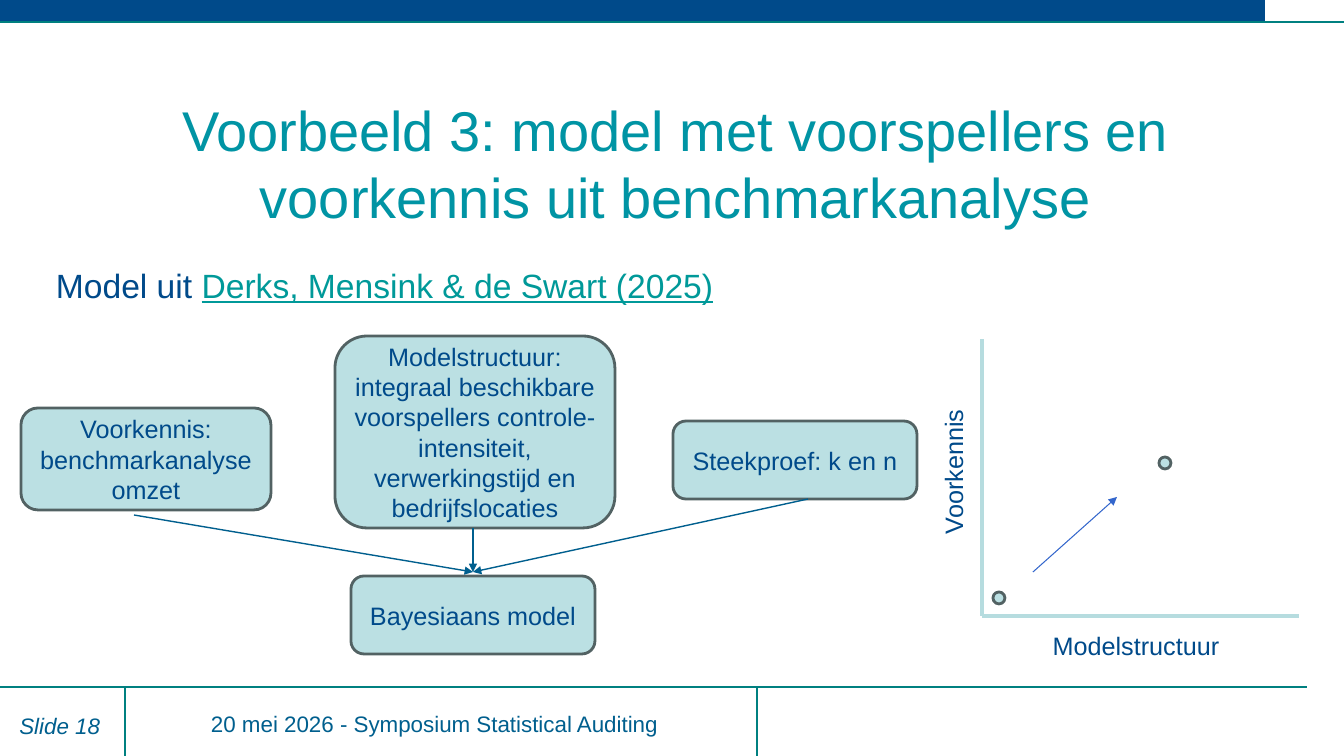
import pptx
import pptx.util
import pptx.dml.color
import pptx.enum.shapes
import pptx.enum.text
import pptx.oxml.ns
from lxml import etree

RGB = pptx.dml.color.RGBColor
SHAPE = pptx.enum.shapes.MSO_SHAPE
ALIGN = pptx.enum.text.PP_ALIGN
ANCHOR = pptx.enum.text.MSO_ANCHOR

NAVY = RGB(0x00, 0x4A, 0x8A)
TITLE_TEAL = RGB(0x00, 0x94, 0xA4)
RULE_TEAL = RGB(0x00, 0x80, 0x80)
LINK_TEAL = RGB(0x00, 0x99, 0x99)
FOOTER_BLUE = RGB(0x00, 0x5F, 0x8E)
TREND_BLUE = RGB(0x33, 0x66, 0xCC)
AXIS_TEAL = RGB(0xB6, 0xDC, 0xDF)
PALE_TEAL = RGB(0xBB, 0xE0, 0xE3)
OUTLINE = RGB(0x52, 0x62, 0x63)

# Content; lengths in px on a slide of 1344 by 756
WIDTH, HEIGHT = 1344, 756
EMU_PER_PX = 12192000 / WIDTH

TITLE = "Voorbeeld 3: model met voorspellers en voorkennis uit benchmarkanalyse"
SOURCE = [("Model uit ", {}),
          ("Derks, Mensink & de Swart (2025)", {"color": LINK_TEAL, "underline": True})]
FOOTER = "20 mei 2026 - Symposium Statistical Auditing"
SLIDE_NUMBER = "Slide 18"

MODEL_INPUTS = [  # text, box, start of its arrow
    ("Modelstructuur: integraal beschikbare voorspellers controle-intensiteit, "
     "verwerkingstijd en bedrijfslocaties", (335, 336, 280, 192), (473, 528)),
    ("Voorkennis: benchmarkanalyse omzet", (21, 408, 250, 102), (134, 515)),
    ("Steekproef: k en n", (673, 421, 244, 78), (808, 499)),
]
MODEL = ("Bayesiaans model", (351, 576, 244, 78))
MODEL_ENTRY = (473, 572)

ORIGIN, X_END, Y_END = (982, 616), (1299, 616), (982, 339)
POINTS = [(999, 598), (1165, 463)]
POINT_SIZE = 12
TREND = ((1033, 572), (1117, 497))

FOOTER_TOP, FOOTER_END = 687, 1307
FOOTER_DIVIDERS = [125, 757]
HEADER_BAR = (0, 0, 1265, 23)
HEADER_RULE_Y = 22

deck = pptx.Presentation()


def px(length):
    return pptx.util.Emu(round(length * EMU_PER_PX))


deck.slide_width, deck.slide_height = px(WIDTH), px(HEIGHT)
slide = deck.slides.add_slide(deck.slide_layouts[6])


def write(frame, text, size=18, color=NAVY, align=ALIGN.CENTER, anchor=ANCHOR.TOP,
          italic=False, wrap=True):
    """Fill a text frame with a string or a list of (string, format) runs."""
    frame.word_wrap = wrap
    frame.vertical_anchor = anchor
    paragraph = frame.paragraphs[0]
    paragraph.alignment = align
    for words, own in [(text, {})] if isinstance(text, str) else text:
        run = paragraph.add_run()
        run.text = words
        run.font.name = "Arial"
        run.font.size = pptx.util.Pt(size)
        run.font.italic = italic
        run.font.underline = own.get("underline", False)
        run.font.color.rgb = own.get("color", color)


def add_label(text, box, rotation=0, **form):
    label = slide.shapes.add_textbox(*map(px, box))
    label.rotation = rotation
    write(label.text_frame, text, **form)


def add_block(kind, box, fill=PALE_TEAL, outline=OUTLINE):
    block = slide.shapes.add_shape(kind, *map(px, box))
    block.shadow.inherit = False
    block.fill.solid()
    block.fill.fore_color.rgb = fill
    if outline is None:
        block.line.fill.background()
    else:
        block.line.color.rgb = outline
        block.line.width = pptx.util.Pt(2)
    return block


def add_line(start, end, color=RULE_TEAL, width=2, arrow=False):
    line = slide.shapes.add_connector(pptx.enum.shapes.MSO_CONNECTOR.STRAIGHT,
                                      *map(px, start + end))
    line.line.color.rgb = color
    line.line.width = pptx.util.Pt(width)
    qn = pptx.oxml.ns.qn
    if arrow:
        etree.SubElement(line.line._get_or_add_ln(), qn("a:tailEnd"), type="triangle")
    etree.SubElement(line._element.spPr, qn("a:effectLst"))


# Header and footer
add_line((0, FOOTER_TOP), (FOOTER_END, FOOTER_TOP))
for divider in FOOTER_DIVIDERS:
    add_line((divider, FOOTER_TOP), (divider, HEIGHT))
add_block(SHAPE.RECTANGLE, HEADER_BAR, fill=NAVY, outline=None)
add_line((0, HEADER_RULE_Y), (WIDTH, HEADER_RULE_Y))
add_label(FOOTER, (111, 705, 647, 36), size=16, color=FOOTER_BLUE)
add_label(SLIDE_NUMBER, (0, 707, 110, 34), size=16, color=FOOTER_BLUE,
          align=ALIGN.RIGHT, italic=True)

# Title and source
add_label(TITLE, (40, 112, 1270, 102), size=40, color=TITLE_TEAL, anchor=ANCHOR.MIDDLE)
add_label(SOURCE, (46, 260, 816, 48), size=24, align=ALIGN.LEFT)

# Plot of prior knowledge against model structure
for axis_end in (Y_END, X_END):
    add_line(ORIGIN, axis_end, color=AXIS_TEAL, width=2.25)
add_label("Voorkennis", (880, 452, 146, 40), rotation=270, wrap=False)
add_label("Modelstructuur", (1042, 625, 188, 40), wrap=False)
for x, y in POINTS:
    add_block(SHAPE.OVAL, (x - POINT_SIZE / 2, y - POINT_SIZE / 2, POINT_SIZE, POINT_SIZE))
add_line(*TREND, color=TREND_BLUE, width=0.75, arrow=True)

# Model diagram
for text, box in [entry[:2] for entry in MODEL_INPUTS] + [MODEL]:
    block = add_block(SHAPE.ROUNDED_RECTANGLE, box)
    write(block.text_frame, text, anchor=ANCHOR.MIDDLE)
for _, _, arrow_start in MODEL_INPUTS:
    add_line(arrow_start, MODEL_ENTRY, color=FOOTER_BLUE, width=1, arrow=True)

deck.save("out.pptx")
